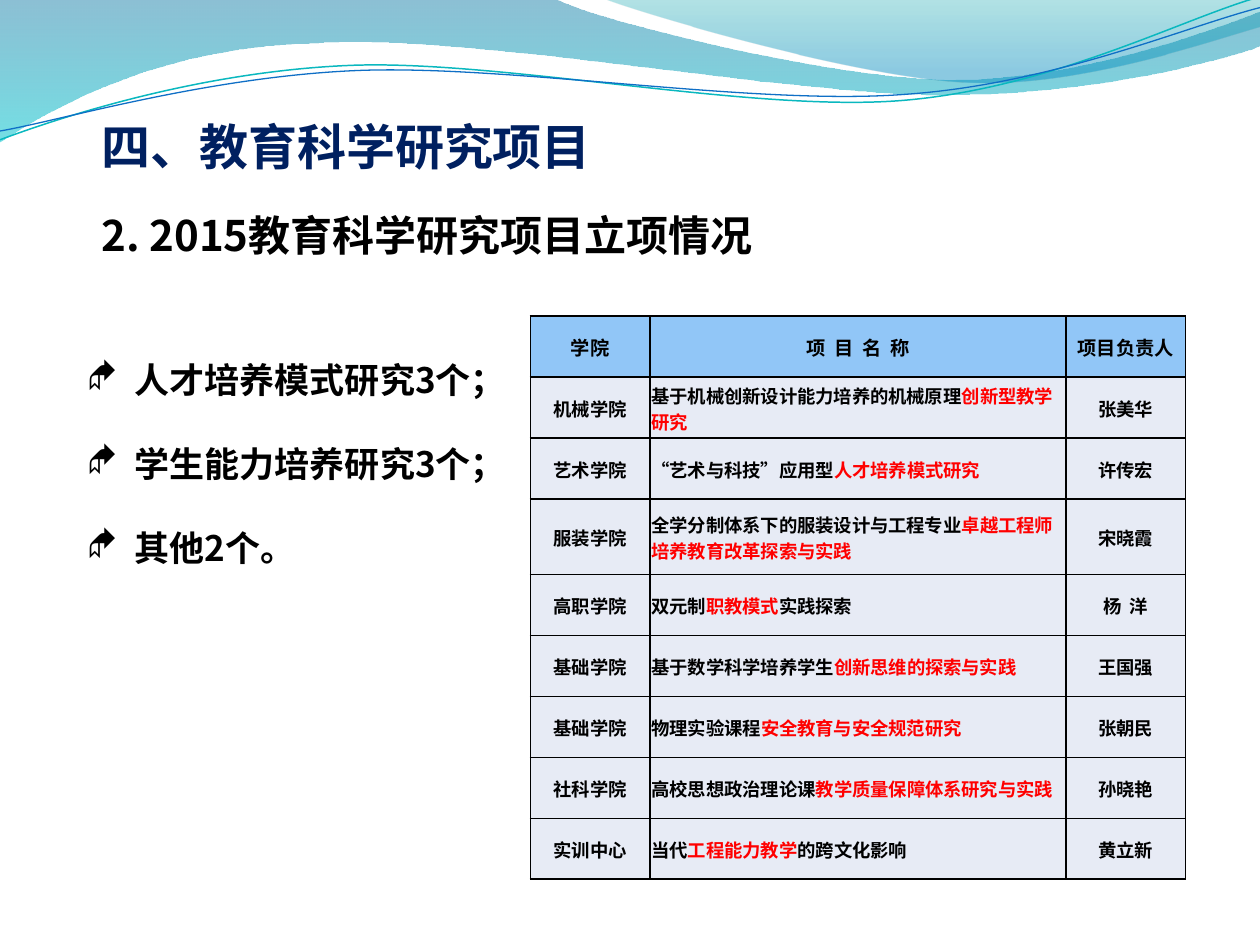
import math

from lxml import etree
from pptx import Presentation, util as u
from pptx.dml.color import RGBColor
from pptx.enum import shapes, text
from pptx.oxml.ns import qn

SANS = "Noto Sans CJK SC"
BLACK, RED, NAVY = "000000", "FF0000", "002060"
HEAD, PALE = "91C6F7", "E7EBF5"

BACK = [(0, 0), (4.4, -0.01), (4.76, 0.17, 6.64, 0.63, 7.58, 0.63),
        (8.53, 0.63, 9.58, 0.26, 10, 0.09), (10.01, 0.36),
        (9.83, 0.44, 8.7, 0.76, 7.46, 0.75), (6.22, 0.75, 3.82, 0.28, 2.57, 0.34),
        (1.29, 0.36, 0.46, 0.83, -0.01, 1.13), (0, 0)]
FRONT = [(4.79, -0.01), (5.09, 0.11, 6.82, 0.62, 7.69, 0.65),
         (8.56, 0.69, 9.61, 0.32, 10, 0.21), (10, 0), (4.79, -0.01)]
TEAL = [(0, 1.11), (0.48, 0.93, 1.58, 0.57, 2.77, 0.52),
        (3.95, 0.47, 5.93, 0.89, 7.13, 0.8), (8.33, 0.71, 9.38, 0.15, 9.98, -0.02)]
BLUE = [(0, 1.04), (0.47, 0.96, 1.64, 0.61, 2.83, 0.56),
        (4.03, 0.51, 5.97, 0.84, 7.17, 0.75), (8.36, 0.67, 9.41, 0.21, 10, 0.06)]

ROWS = [
    ("学院", "项  目  名  称", "项目负责人"),
    ("机械学院", "基于机械创新设计能力培养的机械原理|创新型教学研究", "张美华"),
    ("艺术学院", "“艺术与科技”应用型|人才培养模式研究", "许传宏"),
    ("服装学院", "全学分制体系下的服装设计与工程专业|卓越工程师培养教育改革探索与实践", "宋晓霞"),
    ("高职学院", "双元制|职教模式|实践探索", "杨  洋"),
    ("基础学院", "基于数学科学培养学生|创新思维的探索与实践", "王国强"),
    ("基础学院", "物理实验课程|安全教育与安全规范研究", "张朝民"),
    ("社科学院", "高校思想政治理论课|教学质量保障体系研究与实践", "孙晓艳"),
    ("实训中心", "当代|工程能力教学|的跨文化影响", "黄立新"),
]
GOALS = ["人才培养模式研究3个；", "学生能力培养研究3个；", "其他2个。"]


def rgb(code):
    return RGBColor.from_string(code)


def inch(box):
    return [u.Inches(n) for n in box]


def style(run, size, color, face=SANS):
    font = run.font
    font.size, font.bold, font.name = u.Pt(size), True, face
    font.color.rgb = rgb(color)
    props = run._r.get_or_add_rPr()
    props.set("lang", "zh-CN")
    east = etree.Element(qn("a:ea"), typeface=SANS)
    props.find(qn("a:latin")).addnext(east)


def local(dot, box, turn):
    left, top, width, height = box
    angle = math.radians(-turn)
    x, y = dot[0] - left - width / 2, dot[1] - top - height / 2
    return (u.Inches(x * math.cos(angle) - y * math.sin(angle) + width / 2),
            u.Inches(x * math.sin(angle) + y * math.cos(angle) + height / 2))


def curve(parent, box, steps, close, turn=0):
    dots = [[local(step[n:n + 2], box, turn) for n in range(0, len(step), 2)]
            for step in steps]
    form = parent.shapes.build_freeform(*dots[0][0])
    form.add_line_segments([dot[-1] for dot in dots[1:]], close=close)
    shape = form.convert_to_shape()
    shape.left, shape.top, shape.width, shape.height = inch(box)
    shape.rotation = turn
    shape.shadow.inherit = False
    trail = next(shape._element.iter(qn("a:path")))
    trail.set("w", str(shape.width))
    trail.set("h", str(shape.height))
    for part, group in zip(list(trail), dots):
        for spot in list(part):
            part.remove(spot)
        if len(group) == 3:
            bend = etree.Element(qn("a:cubicBezTo"))
            trail.replace(part, bend)
            part = bend
        for x, y in group:
            etree.SubElement(part, qn("a:pt"), x=str(x), y=str(y))
    return shape


def waves(slide):
    fills = [((-0.01, -0.01, 10.02, 1.14), BACK, [(0, "0074A1", 45), (1, "00C6CF", 55)]),
             ((4.79, -0.01, 5.21, 0.7), FRONT, [(0, "00A1A9", 30), (0.8, "008BBF", 45)])]
    for box, steps, stops in fills:
        shape = curve(slide, box, steps, True)
        shape.line.fill.background()
        shape.fill.gradient()
        shape.fill.gradient_angle = 270
        for stop, (place, color, alpha) in zip(shape.fill.gradient_stops, stops):
            stop.position = place
            stop.color.rgb = rgb(color)
            tone = stop._gs.find(qn("a:srgbClr"))
            etree.SubElement(tone, qn("a:alpha"), val=str(alpha * 1000))
    group = slide.shapes.add_group_shape()
    lines = [((-0.02, 0.22, 10.02, 0.71), TEAL, "0AB8BF", 0.85),
             ((-0.02, 0.3, 10.03, 0.58), BLUE, "0F6FC6", 0.75)]
    for box, steps, color, width in lines:
        shape = curve(group, box, steps, False, 357.3)
        shape.fill.background()
        shape.line.color.rgb = rgb(color)
        shape.line.width = u.Pt(width)


def title(slide, box, words, size, color):
    shape = slide.shapes.add_shape(shapes.MSO_SHAPE.ROUNDED_RECTANGLE, *inch(box))
    shape.shadow.inherit = False
    shape.fill.background()
    shape.line.fill.background()
    frame = shape.text_frame
    frame.text = words
    frame.vertical_anchor = text.MSO_ANCHOR.MIDDLE
    para = frame.paragraphs[0]
    para.alignment = text.PP_ALIGN.LEFT
    style(para.runs[0], size, color)


def goals(slide, box):
    frame = slide.shapes.add_textbox(*inch(box)).text_frame
    frame.word_wrap = True
    frame.auto_size = text.MSO_AUTO_SIZE.SHAPE_TO_FIT_TEXT
    frame.text = "\n".join(GOALS)
    indent = u.Inches(0.38)
    for para in frame.paragraphs:
        para.line_spacing = 2.0
        props = para._p.get_or_add_pPr()
        props.set("marL", str(indent))
        props.set("indent", str(-indent))
        etree.SubElement(props, qn("a:buFont"), typeface="Wingdings")
        etree.SubElement(props, qn("a:buChar"), char="◆")
        style(para.runs[0], 20, BLACK)


def border(cell):
    props = cell._tc.get_or_add_tcPr()
    for side in ("lnL", "lnR", "lnT", "lnB"):
        line = etree.SubElement(props, qn("a:" + side), w=str(u.Pt(1)))
        fill = etree.SubElement(line, qn("a:solidFill"))
        etree.SubElement(fill, qn("a:srgbClr"), val=BLACK)


def entry(cell, words, head, left):
    border(cell)
    cell.fill.solid()
    cell.fill.fore_color.rgb = rgb(HEAD if head else PALE)
    cell.margin_left = cell.margin_right = cell.margin_top = u.Inches(0.01)
    cell.margin_bottom = 0
    cell.vertical_anchor = text.MSO_ANCHOR.MIDDLE
    para = cell.text_frame.paragraphs[0]
    para.alignment = text.PP_ALIGN.LEFT if left else text.PP_ALIGN.CENTER
    for n, part in enumerate(words.split("|")):
        run = para.add_run()
        run.text = part
        style(run, 11 if head else 10.5, RED if n % 2 else BLACK, "Arial")


def projects(slide, box):
    grid = slide.shapes.add_table(len(ROWS), 3, *inch(box)).table
    side, tall = 0.95, 0.6
    low = (box[3] - tall) / (len(ROWS) - 1)
    for col, width in zip(grid.columns, (side, box[2] - 2 * side, side)):
        col.width = u.Inches(width)
    for r, row in enumerate(ROWS):
        grid.rows[r].height = u.Inches(tall if r == 3 else low)
        for c, words in enumerate(row):
            entry(grid.cell(r, c), words, r == 0, r > 0 and c == 1)


def main():
    deck = Presentation()
    deck.slide_width, deck.slide_height = inch((10, 7.5))
    slide = deck.slides.add_slide(deck.slide_layouts[6])
    waves(slide)
    projects(slide, (4.21, 2.51, 5.2, 4.47))
    title(slide, (0.67, 0.76, 4.96, 0.79), "四、教育科学研究项目", 28, NAVY)
    title(slide, (0.67, 1.47, 5.9, 0.79), "2. 2015教育科学研究项目立项情况", 24, BLACK)
    goals(slide, (0.59, 2.46, 3.69, 2.12))
    deck.save("out.pptx")


if __name__ == "__main__":
    main()
